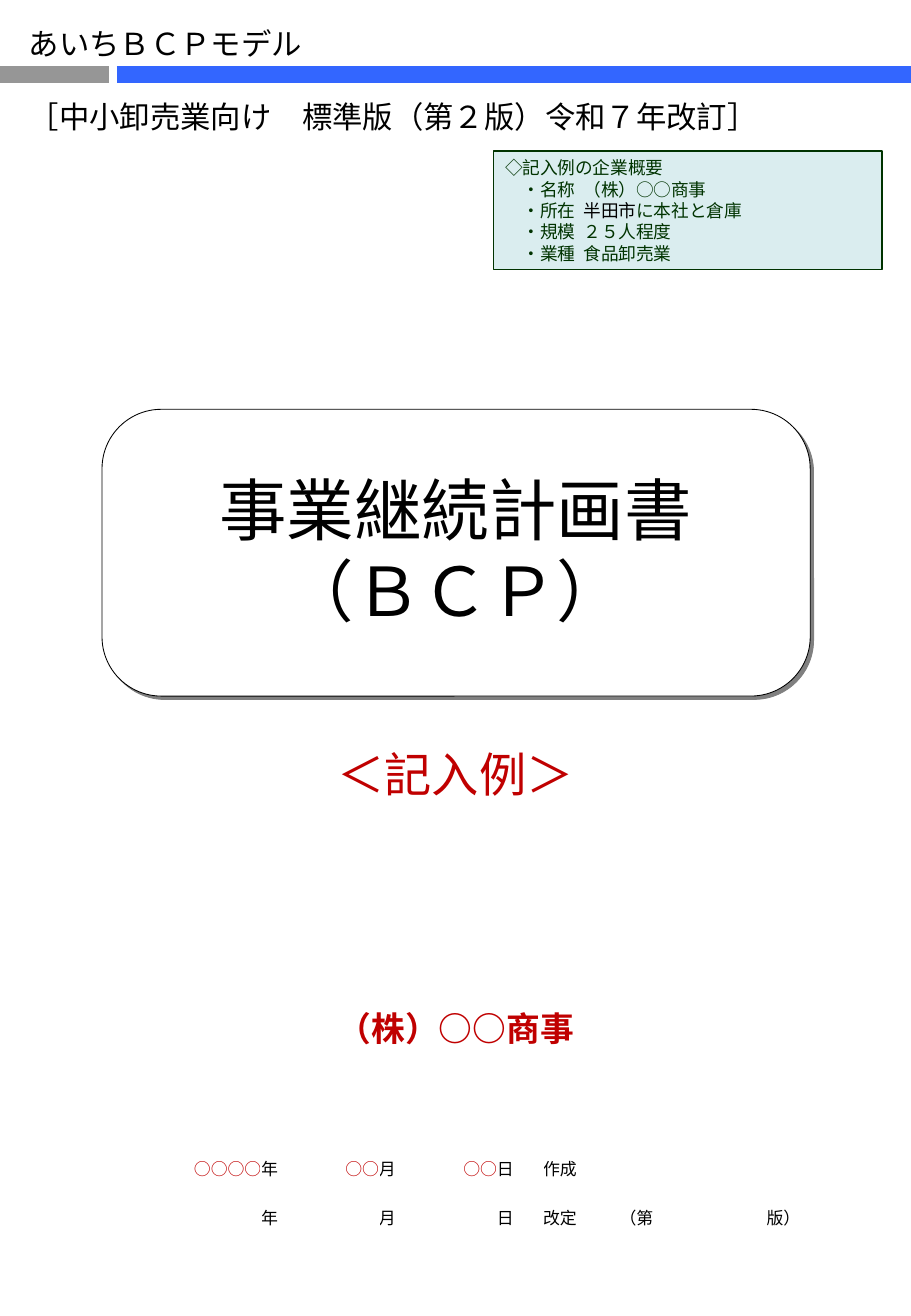
from lxml.etree import SubElement
from pptx import Presentation
from pptx.dml.color import RGBColor
from pptx.enum.shapes import MSO_CONNECTOR, MSO_SHAPE
from pptx.enum.text import MSO_ANCHOR, PP_ALIGN
from pptx.oxml.ns import qn
from pptx.util import Pt

BLACK = RGBColor(0, 0, 0)
WHITE = RGBColor(255, 255, 255)
GRAY = RGBColor(0x96, 0x96, 0x96)
BLUE = RGBColor(0x33, 0x66, 0xFF)
RED = RGBColor(0xC0, 0, 0)
GREEN = RGBColor(0, 0x33, 0)
PALE_TEAL = RGBColor(0xDA, 0xED, 0xEF)
JAPANESE = "Noto Sans CJK JP"
LINE_HEIGHT = 1.2


class Cover:
    """Holds the style and the current slide; lengths are in points."""

    def __init__(self, slide):
        self.slide = slide
        self.shapes = slide.shapes

    def fill_text(self, frame, lines, size, color=BLACK, font=JAPANESE, bold=False, **layout):
        """Each line is a string or a list of (text, color) spans."""
        paragraph_format = {"line_spacing": Pt(size * LINE_HEIGHT), "space_before": Pt(0),
                            "alignment": PP_ALIGN.LEFT, **layout}
        for index, line in enumerate(lines):
            para = frame.add_paragraph() if index else frame.paragraphs[0]
            for name, value in paragraph_format.items():
                setattr(para, name, value)
            spans = [(line, color)] if isinstance(line, str) else line
            for text, span_color in spans:
                for part_index, part in enumerate(text.split("\v")):
                    if part_index:
                        para.add_line_break()
                    span = para.add_run()
                    span.text = part
                    for name, value in {"size": Pt(size), "name": font, "bold": bold}.items():
                        setattr(span.font, name, value)
                    span.font.color.rgb = span_color
                    SubElement(span.font._element, qn("a:ea"), typeface=JAPANESE)

    def text(self, place, lines, size, **style):
        box = self.shapes.add_textbox(*map(Pt, place))
        box.text_frame.word_wrap = False
        self.fill_text(box.text_frame, lines, size, **style)
        return box

    def bar(self, start, end, y, color):
        bar = self.shapes.add_connector(MSO_CONNECTOR.STRAIGHT, Pt(start), Pt(y), Pt(end), Pt(y))
        bar.line.width = Pt(10)
        bar.line.color.rgb = color
        SubElement(bar._element.spPr, qn("a:effectLst"))

    def panel(self, kind, place, fill, line, width):
        panel = self.shapes.add_shape(kind, *map(Pt, place))
        panel.shadow.inherit = False
        panel.fill.solid()
        panel.fill.fore_color.rgb = fill
        panel.line.color.rgb = line
        panel.line.width = Pt(width)
        return panel

    def drop_shadow(self, panel, distance, color):
        effects = panel._element.spPr.find(qn("a:effectLst"))
        shadow = SubElement(effects, qn("a:outerShdw"), dist=str(Pt(distance)),
                            dir=str(45 * 60000), algn="ctr", rotWithShape="0")
        SubElement(shadow, qn("a:srgbClr"), val=color)

    def title(self, place, text, size):
        title = self.shapes.title
        title.left, title.top, title.width, title.height = map(Pt, place)
        title.text_frame.vertical_anchor = MSO_ANCHOR.MIDDLE
        self.fill_text(title.text_frame, [text], size, alignment=PP_ALIGN.CENTER)
        return title

    def table(self, place, widths, rows, size):
        table = self.shapes.add_table(len(rows), len(widths), *map(Pt, place)).table
        for column, width in zip(table.columns, widths):
            column.width = Pt(width)
        margins = {"margin_left": 0, "margin_right": 0,
                   "margin_top": Pt(3), "margin_bottom": Pt(3)}
        for row_index, row in enumerate(rows):
            for column_index, text in enumerate(row):
                cell = table.cell(row_index, column_index)
                cell.fill.solid()
                cell.fill.fore_color.rgb = WHITE
                for name, value in margins.items():
                    setattr(cell, name, value)
                if text.startswith("○"):
                    self.fill_text(cell.text_frame, [text], size, RED, alignment=PP_ALIGN.RIGHT)
                elif text:
                    self.fill_text(cell.text_frame, [text], size, font="Arial")


def main():
    deck = Presentation()
    deck.slide_width, deck.slide_height = Pt(540), Pt(780)
    cover = Cover(deck.slides.add_slide(deck.slide_layouts[5]))

    # Header bars and model name
    cover.bar(0, 64.8, 44, GRAY)
    cover.bar(69.3, 540, 44, BLUE)
    header = cover.text((10, 11.5, 451, 73),
                        ["あいちＢＣＰモデル", "［中小卸売業向け　標準版（第２版）令和７年改訂］"], 18)
    header.text_frame.paragraphs[1].space_before = Pt(18 * LINE_HEIGHT)

    # Framed title
    frame = cover.panel(MSO_SHAPE.ROUNDED_RECTANGLE, (60.5, 242.6, 419.8, 170), WHITE, BLACK, 0.5)
    frame.adjustments[0] = 0.207
    cover.drop_shadow(frame, 2.8, "808080")
    title = cover.title((40.3, 242, 459.4, 167), "事業継続計画書\v（ＢＣＰ）", 40)
    frame._element.addnext(title._element)

    # Creation and revision dates
    cover.table((69.8, 684.7, 429.8, 58.4),
                [85, 27.4, 42.5, 27.4, 42.5, 27.4, 45.4, 44.6, 42.5, 44.6],
                [["○○○○", "年", "○○", "月", "○○", "日", "作成", "", "", ""],
                 ["", "年", "", "月", "", "日", "改定", "（第", "", "版）"]], 10)

    # Example company
    company = cover.panel(MSO_SHAPE.RECTANGLE, (292.3, 89.5, 230.6, 70.4), PALE_TEAL, GREEN, 0.75)
    location = [("・所在\t", GREEN), ("半田市", BLACK), ("に本社と倉庫", GREEN)]
    cover.fill_text(company.text_frame,
                    ["◇記入例の企業概要", "・名称\t（株）○○商事", location,
                     "・規模\t２５人程度", "・業種\t食品卸売業"], 10.5, GREEN)
    for para in company.text_frame.paragraphs[1:]:
        properties = para._p.get_or_add_pPr()
        properties.set("marL", str(Pt(10.5)))
        properties.set("indent", "0")
        stops = SubElement(properties, qn("a:tabLst"))
        SubElement(stops, qn("a:tab"), pos=str(Pt(63)), algn="l")

    # Example label and company name
    cover.text((193, 438.5, 155.5, 41), ["＜記入例＞"], 28, color=RED)
    cover.text((193, 594, 157, 31.5), ["（株）○○商事"], 20, color=RED, bold=True)

    deck.save("out.pptx")


if __name__ == "__main__":
    main()
